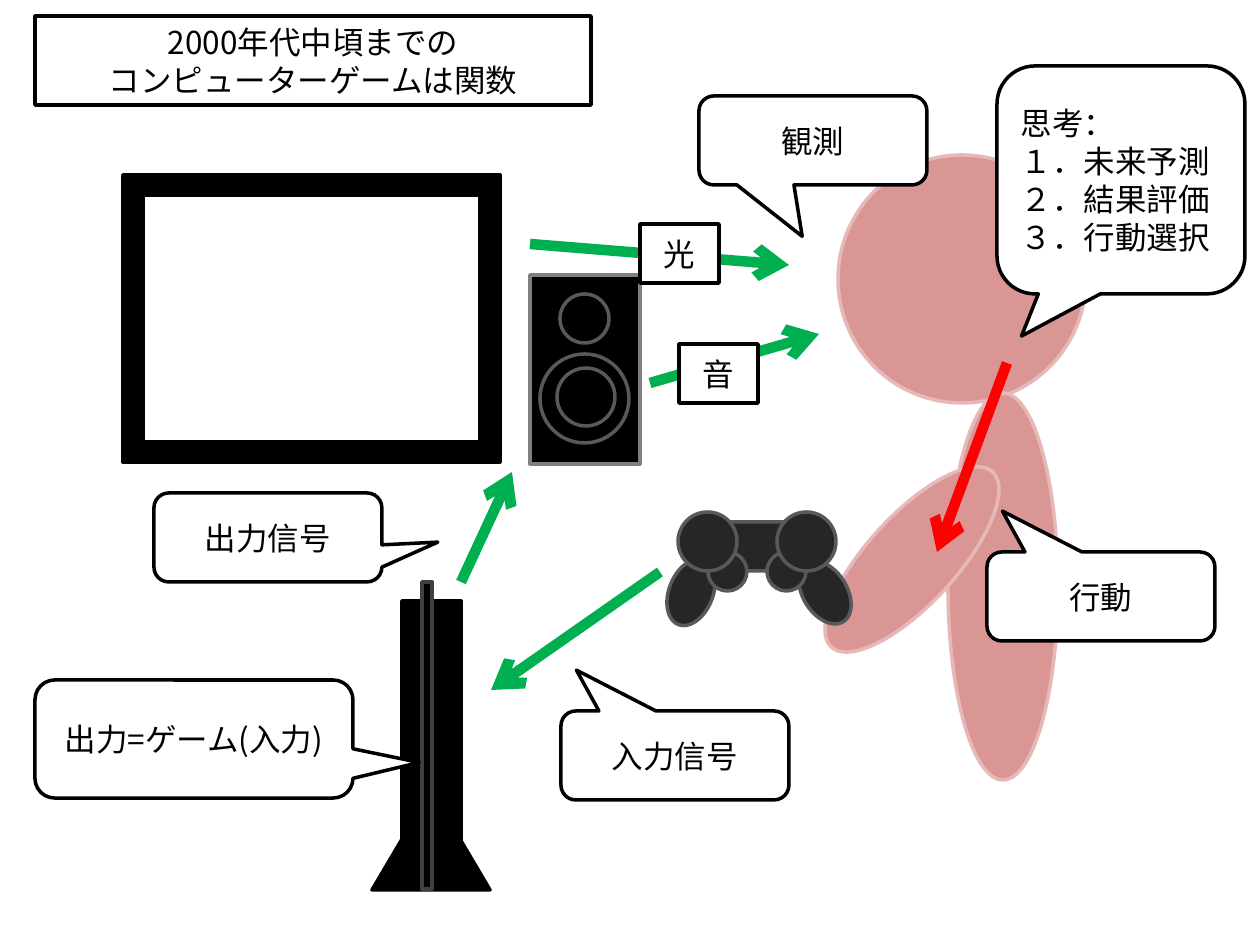
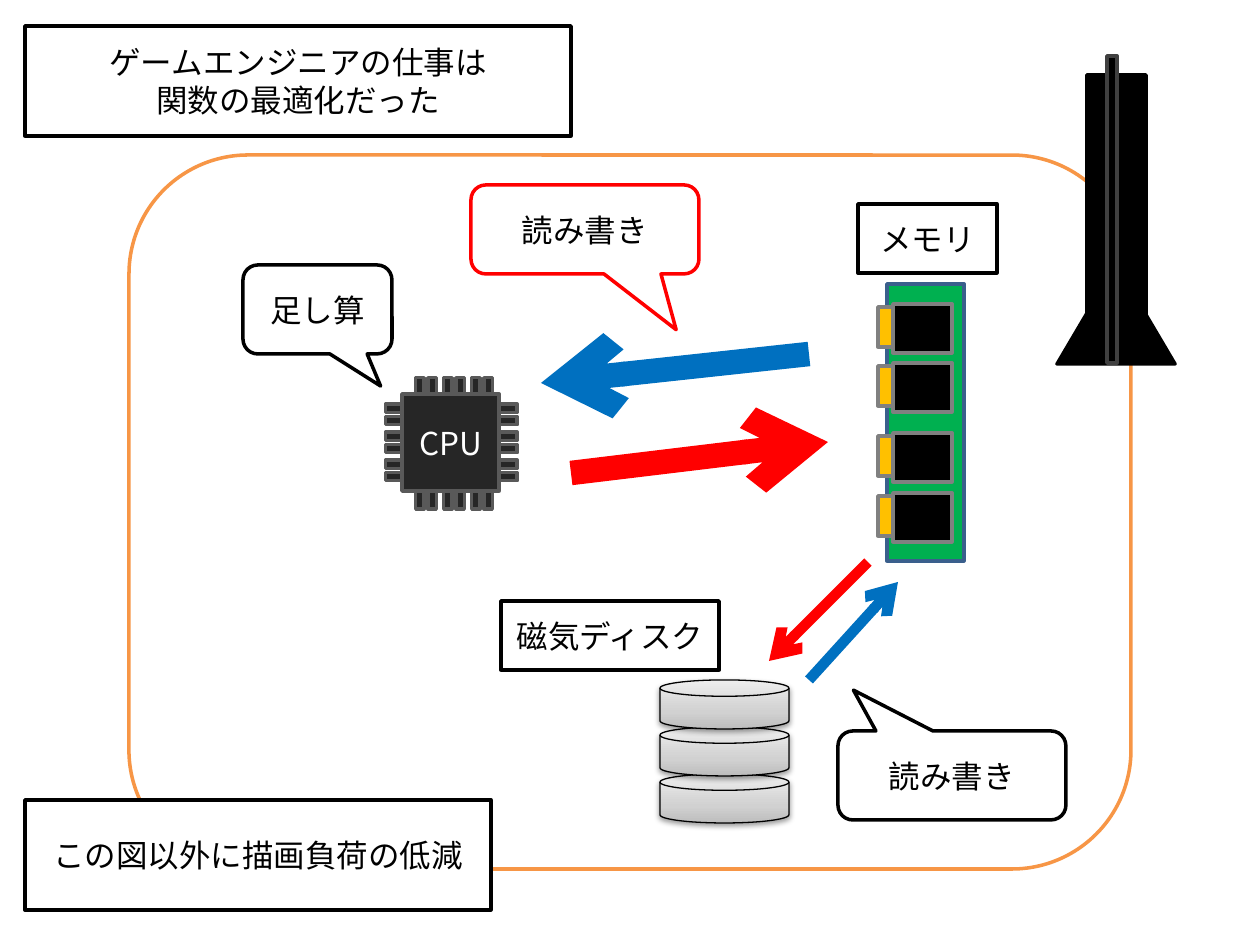
from copy import deepcopy

from pptx import Presentation
from pptx.dml.color import RGBColor
from pptx.enum.shapes import MSO_CONNECTOR, MSO_SHAPE
from pptx.enum.text import MSO_ANCHOR, MSO_AUTO_SIZE, PP_ALIGN
from pptx.oxml.ns import qn
from pptx.util import Emu, Pt
from lxml.etree import SubElement

PX_PER_INCH = 126
FONT = "Noto Sans CJK JP"
TITLE_ONLY_LAYOUT = 5

BLACK, WHITE = "000000", "FFFFFF"
GREEN, RED, BLUE = "00B050", "FF0000", "0070C0"
SKIN, SKIN_EDGE = "D99694", "E6B9B8"
CHARCOAL, DARK_EDGE, FIN_EDGE, GRAY = "262626", "595959", "404040", "808080"
GOLD, ORANGE, BOARD_EDGE = "FFC000", "F79646", "3A5F8C"
DISK_STOPS = ((0, "BDBDBD"), (0.35, "D1D1D1"), (1, "EEEEEE"))

CALLOUT_SIZE = (228, 89)
TAIL_UP_LEFT = (-0.432, -0.959)


def px(value):
    return Emu(round(value * 914400 / PX_PER_INCH))


def color(hex_string):
    return RGBColor.from_string(hex_string)


def write_text(shape, text, size=18, text_color=BLACK, align=PP_ALIGN.CENTER):
    frame = shape.text_frame
    frame.word_wrap = True
    frame.auto_size = MSO_AUTO_SIZE.NONE
    frame.vertical_anchor = MSO_ANCHOR.MIDDLE
    frame.text = text
    for paragraph in frame.paragraphs:
        paragraph.alignment = align
        for run in paragraph.runs:
            run.font.name = FONT
            run.font.size = Pt(size)
            run.font.color.rgb = color(text_color)
            SubElement(run.font._element, qn("a:ea"), typeface=FONT)


def paint(shape, fill, line, width=2):
    shape.shadow.inherit = False
    shape.fill.solid()
    shape.fill.fore_color.rgb = color(fill)
    shape.line.color.rgb = color(line)
    shape.line.width = Pt(width)


def add_part(shapes, kind, box, fill=WHITE, line=BLACK, rotation=0):
    shape = shapes.add_shape(kind, *map(px, box))
    paint(shape, fill, line)
    shape.rotation = rotation
    return shape


def add_label(slide, box, text):
    write_text(add_part(slide.shapes, MSO_SHAPE.RECTANGLE, box), text)


def add_callout(slide, box, tail, text, line=BLACK, **text_format):
    """Add a speech bubble; tail is its tip as a share of the box, from the centre."""
    bubble = add_part(slide.shapes, MSO_SHAPE.ROUNDED_RECTANGULAR_CALLOUT, box, line=line)
    bubble.adjustments[0], bubble.adjustments[1] = tail
    write_text(bubble, text, **text_format)


def add_arrow(slide, start, end, line, width=6):
    arrow = slide.shapes.add_connector(MSO_CONNECTOR.STRAIGHT, *map(px, start + end))
    arrow.line.color.rgb = color(line)
    arrow.line.width = Pt(width)
    SubElement(arrow.line._get_or_add_ln(), qn("a:tailEnd"), type="arrow")
    SubElement(arrow._element.spPr, qn("a:effectLst"))


def add_titled_slide(presentation, box, text):
    slide = presentation.slides.add_slide(presentation.slide_layouts[TITLE_ONLY_LAYOUT])
    title = slide.shapes.title
    title.left, title.top, title.width, title.height = map(px, box)
    paint(title, WHITE, BLACK)
    write_text(title, text)
    return slide


def draw_console(slide, left, top):
    shapes = slide.shapes.add_group_shape().shapes
    add_part(shapes, MSO_SHAPE.RECTANGLE, (left + 30, top + 19, 59, 248), BLACK)
    add_part(shapes, MSO_SHAPE.ISOSCELES_TRIANGLE, (left, top + 208, 118, 100), BLACK)
    add_part(shapes, MSO_SHAPE.RECTANGLE, (left + 50, top, 10, 307), BLACK, FIN_EDGE)


def draw_player(slide, left, top):
    shapes = slide.shapes.add_group_shape().shapes
    head, body, arm = (45, 0, 248, 248), (155, 238, 110, 387), (0, 360, 238, 89)
    for (x, y, width, height), rotation in ((head, 0), (body, 0), (arm, 312.6)):
        add_part(shapes, MSO_SHAPE.OVAL, (left + x, top + y, width, height),
                 SKIN, SKIN_EDGE, rotation)


def draw_controller(slide, left, top):
    shapes = slide.shapes.add_group_shape().shapes
    add_part(shapes, MSO_SHAPE.ROUNDED_RECTANGLE, (left + 49, top + 10, 79, 49),
             CHARCOAL, DARK_EDGE)
    grips = ((0, 46, 44, 69, 21.6), (134, 46, 44, 69, 327.8))
    sticks = ((98, 40, 39, 39, 0), (39, 40, 39, 39, 0))
    pads = ((108, 0, 59, 59, 0), (9, 0, 59, 59, 0))
    for x, y, width, height, rotation in grips + sticks + pads:
        add_part(shapes, MSO_SHAPE.OVAL, (left + x, top + y, width, height),
                 CHARCOAL, DARK_EDGE, rotation)


def draw_monitor(slide, left, top, width, height, bezel=20):
    shapes = slide.shapes.add_group_shape().shapes
    add_part(shapes, MSO_SHAPE.RECTANGLE, (left, top, width, height), BLACK)
    add_part(shapes, MSO_SHAPE.RECTANGLE,
             (left + bezel, top + bezel, width - 2 * bezel, height - 2 * bezel))


def draw_speaker(slide, left, top):
    shapes = slide.shapes.add_group_shape().shapes
    add_part(shapes, MSO_SHAPE.RECTANGLE, (left, top, 110, 189), BLACK, GRAY)
    for x, y, diameter in ((30, 19, 49), (10, 79, 89), (27, 93, 58)):
        add_part(shapes, MSO_SHAPE.OVAL, (left + x, top + y, diameter, diameter),
                 BLACK, DARK_EDGE)


def draw_cpu(slide, left, top, pitch=28):
    shapes = slide.shapes.add_group_shape().shapes
    for index in range(3):
        step = index * pitch
        for x in (0, 111):
            add_part(shapes, MSO_SHAPE.MATH_EQUAL, (left + x, top + 25 + step, 28, 35),
                     CHARCOAL, DARK_EDGE)
        for y in (0, 108):
            add_part(shapes, MSO_SHAPE.MATH_EQUAL, (left + 28 + step, top + y, 32, 35),
                     CHARCOAL, DARK_EDGE, 90)
    chip = add_part(shapes, MSO_SHAPE.RECTANGLE, (left + 20, top + 22, 97, 97),
                    CHARCOAL, DARK_EDGE)
    write_text(chip, "CPU", text_color=WHITE)


def shade_disk(disk):
    """Give a disk its gray gradient, thin outline and soft shadow."""
    disk.line.width = Pt(0.75)
    disk.fill.gradient()
    disk.fill.gradient_angle = 90
    properties = disk._element.spPr
    stop_list = properties.find(".//" + qn("a:gsLst"))
    stop_list.append(deepcopy(stop_list[0]))
    for stop, (position, shade) in zip(disk.fill.gradient_stops, DISK_STOPS):
        stop.position = position
        stop.color.rgb = color(shade)
    shadow = SubElement(properties.find(qn("a:effectLst")), qn("a:outerShdw"),
                        blurRad="40000", dist="20000", dir="5400000", rotWithShape="0")
    shadow_color = SubElement(shadow, qn("a:srgbClr"), val=BLACK)
    SubElement(shadow_color, qn("a:alpha"), val="38000")


def draw_disk_stack(slide, left, top, pitch=47):
    shapes = slide.shapes.add_group_shape().shapes
    for index in (2, 1, 0):
        shade_disk(add_part(shapes, MSO_SHAPE.FLOWCHART_MAGNETIC_DISK,
                            (left, top + index * pitch, 129, 49)))


def draw_memory(slide, left, top):
    shapes = slide.shapes.add_group_shape().shapes
    add_part(shapes, MSO_SHAPE.RECTANGLE, (left + 9, top, 77, 277), GREEN, BOARD_EDGE)
    for row in (20, 79, 149, 209):
        add_part(shapes, MSO_SHAPE.RECTANGLE, (left, top + row + 3, 19, 40), GOLD, GRAY)
        add_part(shapes, MSO_SHAPE.RECTANGLE, (left + 15, top + row, 59, 49), BLACK, GRAY)


def build_game_loop_slide(presentation):
    slide = add_titled_slide(presentation, (35, 16, 556, 89),
                             "2000年代中頃までの\nコンピューターゲームは関数")
    draw_player(slide, 793, 155)
    draw_controller(slide, 669, 512)
    draw_monitor(slide, 123, 175, 377, 287)
    draw_console(slide, 372, 582)
    draw_speaker(slide, 530, 275)

    signals = (((660, 572), (491, 690)), ((461, 582), (512, 472)),
               ((650, 383), (819, 334)), ((530, 244), (789, 265)))
    for start, end in signals:
        add_arrow(slide, start, end, GREEN)
    add_arrow(slide, (1007, 363), (937, 552), RED)

    callouts = (((699, 96), (-0.047, 1.078), "観測"),
                ((561, 711), TAIL_UP_LEFT, "入力信号"),
                ((154, 493), (0.745, 0.053), "出力信号"),
                ((987, 552), TAIL_UP_LEFT, "行動"))
    for corner, tail, text in callouts:
        add_callout(slide, corner + CALLOUT_SIZE, tail, text)
    add_callout(slide, (997, 66, 248, 228), (-0.401, 0.685),
                "思考：\n１．未来予測\n２．結果評価\n３．行動選択", align=PP_ALIGN.LEFT)
    add_callout(slide, (35, 680, 318, 118), (0.709, 0.199), "出力=ゲーム(入力)")

    add_label(slide, (679, 344, 79, 59), "音")
    add_label(slide, (640, 224, 79, 59), "光")


def build_optimization_slide(presentation):
    slide = add_titled_slide(presentation, (25, 26, 546, 110),
                             "ゲームエンジニアの仕事は\n関数の最適化だった")
    add_part(slide.shapes, MSO_SHAPE.ROUNDED_RECTANGLE, (129, 155, 1002, 714), line=ORANGE)
    draw_console(slide, 1057, 56)
    draw_cpu(slide, 382, 372)
    draw_disk_stack(slide, 660, 680)
    draw_memory(slide, 878, 284)

    add_arrow(slide, (809, 680), (898, 582), BLUE)
    add_arrow(slide, (809, 354), (541, 383), BLUE, width=14)
    add_arrow(slide, (571, 473), (828, 442), RED, width=14)
    add_arrow(slide, (868, 562), (769, 661), RED)

    add_callout(slide, (838, 731) + CALLOUT_SIZE, TAIL_UP_LEFT, "読み書き")
    add_callout(slide, (471, 185) + CALLOUT_SIZE, (0.4, 1.127), "読み書き", line=RED)
    add_callout(slide, (243, 265, 149, 89), (0.424, 0.861), "足し算")

    add_label(slide, (858, 204, 139, 69), "メモリ")
    add_label(slide, (501, 601, 218, 69), "磁気ディスク")
    add_label(slide, (25, 800, 466, 110), "この図以外に描画負荷の低減")


def main():
    presentation = Presentation()
    presentation.slide_width, presentation.slide_height = px(1260), px(945)
    build_game_loop_slide(presentation)
    build_optimization_slide(presentation)
    presentation.save("out.pptx")


if __name__ == "__main__":
    main()
